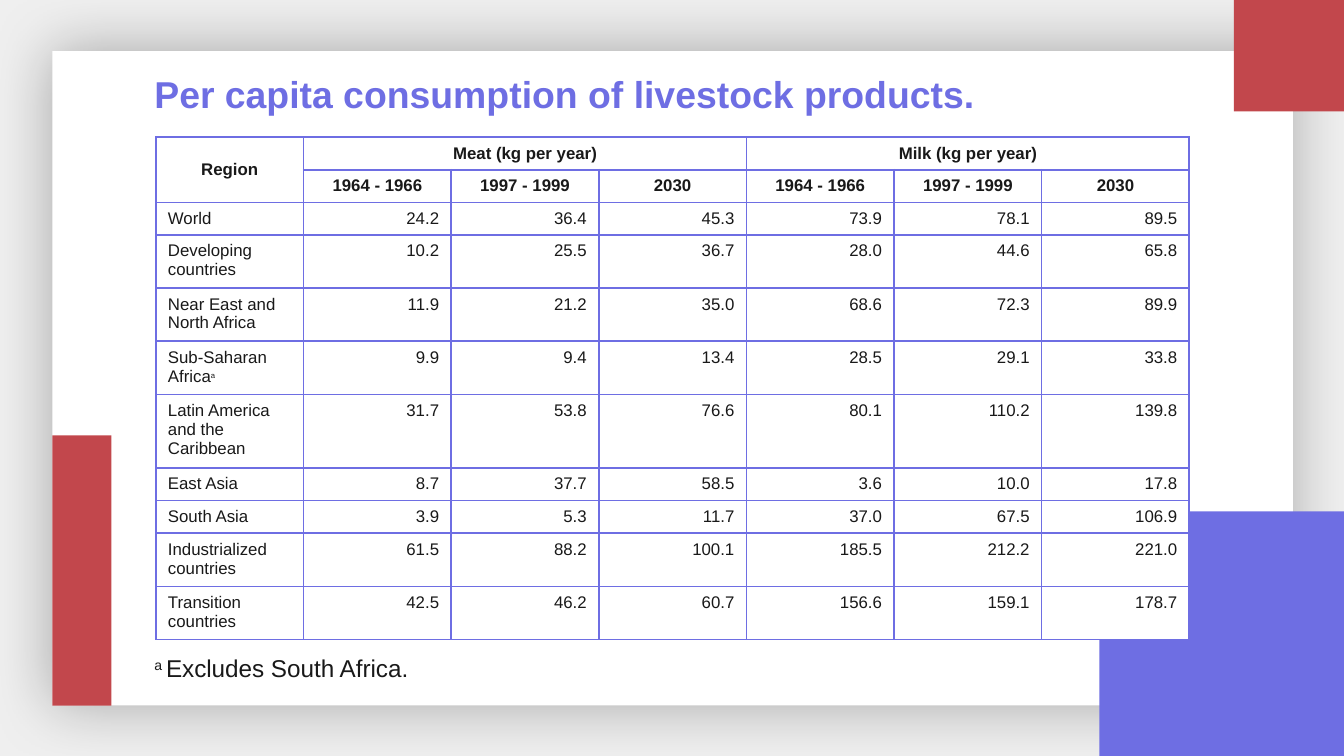
from dataclasses import dataclass

from lxml.etree import SubElement
from pptx import Presentation
from pptx.dml.color import RGBColor
from pptx.enum.shapes import MSO_SHAPE
from pptx.enum.text import MSO_ANCHOR, MSO_AUTO_SIZE, PP_ALIGN
from pptx.oxml import parse_xml
from pptx.oxml.ns import nsdecls, qn
from pptx.util import Inches, Pt


@dataclass(frozen=True)
class Theme:
    """Colours, font and type sizes of the slide."""
    font: str = "Arial"
    back: str = "EFEFEF"
    paper: str = "FFFFFF"
    ink: str = "191919"
    violet: str = "6E6EE3"
    red: str = "C2474C"
    title: int = 20
    note: int = 13
    cell: int = 9
    mark: int = 7


@dataclass(frozen=True)
class Box:
    """A region in grid units, of which the slide is 100 wide."""
    x: float
    y: float
    w: float
    h: float

    def emu(self):
        """Return left, top, width and height as lengths."""
        return [Inches(v / 10) for v in (self.x, self.y, self.w, self.h)]


T = Theme()
SLIDE = Box(0, 0, 100, 56.25)
PERIODS = ["1964 - 1966", "1997 - 1999", "2030"]
PRODUCTS = ["Meat (kg per year)", "Milk (kg per year)"]
REGIONS = [
    ("World", 1, "24.2 36.4 45.3 73.9 78.1 89.5"),
    ("Developing countries", 2, "10.2 25.5 36.7 28.0 44.6 65.8"),
    ("Near East and North Africa", 2, "11.9 21.2 35.0 68.6 72.3 89.9"),
    ("Sub-Saharan Africa", 2, "9.9 9.4 13.4 28.5 29.1 33.8"),
    ("Latin America and the Caribbean", 3, "31.7 53.8 76.6 80.1 110.2 139.8"),
    ("East Asia", 1, "8.7 37.7 58.5 3.6 10.0 17.8"),
    ("South Asia", 1, "3.9 5.3 11.7 37.0 67.5 106.9"),
    ("Industrialized countries", 2, "61.5 88.2 100.1 185.5 212.2 221.0"),
    ("Transition countries", 2, "42.5 46.2 60.7 156.6 159.1 178.7"),
]
MARKED = "Sub-Saharan Africa"


def rgb(color):
    """Turn a hex string into a colour."""
    return RGBColor.from_string(color)


def style(p, size, color=T.ink, bold=False, align=PP_ALIGN.LEFT):
    """Set the font and alignment of a paragraph."""
    p.alignment = align
    p.font.name, p.font.size, p.font.bold = T.font, Pt(size), bold
    p.font.color.rgb = rgb(color)


def add_mark(p, text, size):
    """Add a superscript run."""
    r = p.add_run()
    r.text, r.font.size = text, Pt(size)
    r._r.get_or_add_rPr().set("baseline", "30000")


def add_block(s, box, color):
    """Add a plain rectangle."""
    sp = s.shapes.add_shape(MSO_SHAPE.RECTANGLE, *box.emu())
    sp.shadow.inherit = False
    sp.fill.solid()
    sp.fill.fore_color.rgb = rgb(color)
    sp.line.fill.background()
    return sp


def add_glow(sp, blur, alpha):
    """Give a shape a soft black shadow on all sides."""
    effects = sp._element.spPr.find(qn("a:effectLst"))
    effects.append(parse_xml(
        f'<a:outerShdw {nsdecls("a")} blurRad="{Pt(blur)}" dist="0" algn="ctr" '
        f'rotWithShape="0"><a:srgbClr val="000000"><a:alpha val="{alpha}000"/>'
        f'</a:srgbClr></a:outerShdw>'))


def add_backdrop(s, box):
    """Place the white panel and the coloured corner blocks."""
    panel = Box(box.x + 3.9, box.y + 3.8, box.w - 7.7, box.h - 7.55)
    right, bottom = box.x + box.w, box.y + box.h
    add_glow(add_block(s, panel, T.paper), 33.8, 30)
    add_block(s, Box(right - 18.2, bottom - 18.2, 18.2, 18.2), T.violet)
    add_block(s, Box(right - 8.2, box.y, 8.2, 8.3), T.red)
    add_block(s, Box(panel.x, panel.y + panel.h - 20.1, 4.4, 20.1), T.red)


def add_line(s, box):
    """Add a one-line text box and return its paragraph."""
    tf = s.shapes.add_textbox(*box.emu()).text_frame
    tf.word_wrap = False
    tf.auto_size = MSO_AUTO_SIZE.SHAPE_TO_FIT_TEXT
    tf.vertical_anchor = MSO_ANCHOR.MIDDLE
    return tf.paragraphs[0]


def add_title(s, box):
    """Place the slide title."""
    p = add_line(s, box)
    p.add_run().text = "Per capita consumption of livestock products."
    style(p, T.title, T.violet, bold=True)


def add_footnote(s, box):
    """Place the note below the table."""
    p = add_line(s, box)
    add_mark(p, "a ", T.note)
    p.add_run().text = "Excludes South Africa."
    style(p, T.note)


def frame_cell(cell):
    """Give a cell its borders and fill."""
    tcPr = cell._tc.get_or_add_tcPr()
    for side in ("lnL", "lnR", "lnT", "lnB"):
        ln = SubElement(tcPr, qn(f"a:{side}"), w=str(Pt(1)))
        SubElement(SubElement(ln, qn("a:solidFill")), qn("a:srgbClr"), val=T.violet)
    cell.fill.solid()
    cell.fill.fore_color.rgb = rgb(T.paper)


def fill_cell(cell, text, align, bold=False):
    """Write the text of a cell."""
    p = cell.text_frame.paragraphs[0]
    p.add_run().text = text
    if text == MARKED:
        add_mark(p, "a", T.mark)
    style(p, T.cell, bold=bold, align=align)


def add_consumption_table(s, box):
    """Place the table, with row heights following the lines of text."""
    n = len(PERIODS)
    lines = [1, 1] + [count for _, count, _ in REGIONS]
    cols = 1 + n * len(PRODUCTS)
    table = s.shapes.add_table(len(lines), cols, *box.emu()).table
    table.first_row = table.horz_banding = False
    weights = [3 + 5 * count for count in lines]
    for row, weight in zip(table.rows, weights):
        row.height = Inches(box.h / 10 * weight / sum(weights))
    for cell in table.iter_cells():
        cell.margin_left = cell.margin_right = Inches(0.09)
        cell.margin_top = cell.margin_bottom = Inches(0.05)
        frame_cell(cell)

    center = PP_ALIGN.CENTER
    table.cell(0, 0).merge(table.cell(1, 0))
    table.cell(0, 0).vertical_anchor = MSO_ANCHOR.MIDDLE
    fill_cell(table.cell(0, 0), "Region", center, True)
    for i, product in enumerate(PRODUCTS):
        first = 1 + i * n
        table.cell(0, first).merge(table.cell(0, first + n - 1))
        fill_cell(table.cell(0, first), product, center, True)
        for j, period in enumerate(PERIODS):
            fill_cell(table.cell(1, first + j), period, center, True)
    for i, (region, _, values) in enumerate(REGIONS, 2):
        fill_cell(table.cell(i, 0), region, PP_ALIGN.LEFT)
        for j, value in enumerate(values.split(), 1):
            fill_cell(table.cell(i, j), value, PP_ALIGN.RIGHT)


def main():
    """Build the slide and save it."""
    prs = Presentation()
    prs.slide_width, prs.slide_height = SLIDE.emu()[2:]
    s = prs.slides.add_slide(prs.slide_layouts[6])
    s.background.fill.solid()
    s.background.fill.fore_color.rgb = rgb(T.back)
    add_backdrop(s, SLIDE)
    add_consumption_table(s, Box(11.6, 10.2, 76.9, 37.4))
    add_title(s, Box(10.5, 4.8, 63.5, 4.4))
    add_footnote(s, Box(10.5, 48.1, 21.6, 3.2))
    prs.save("out.pptx")


if __name__ == "__main__":
    main()
